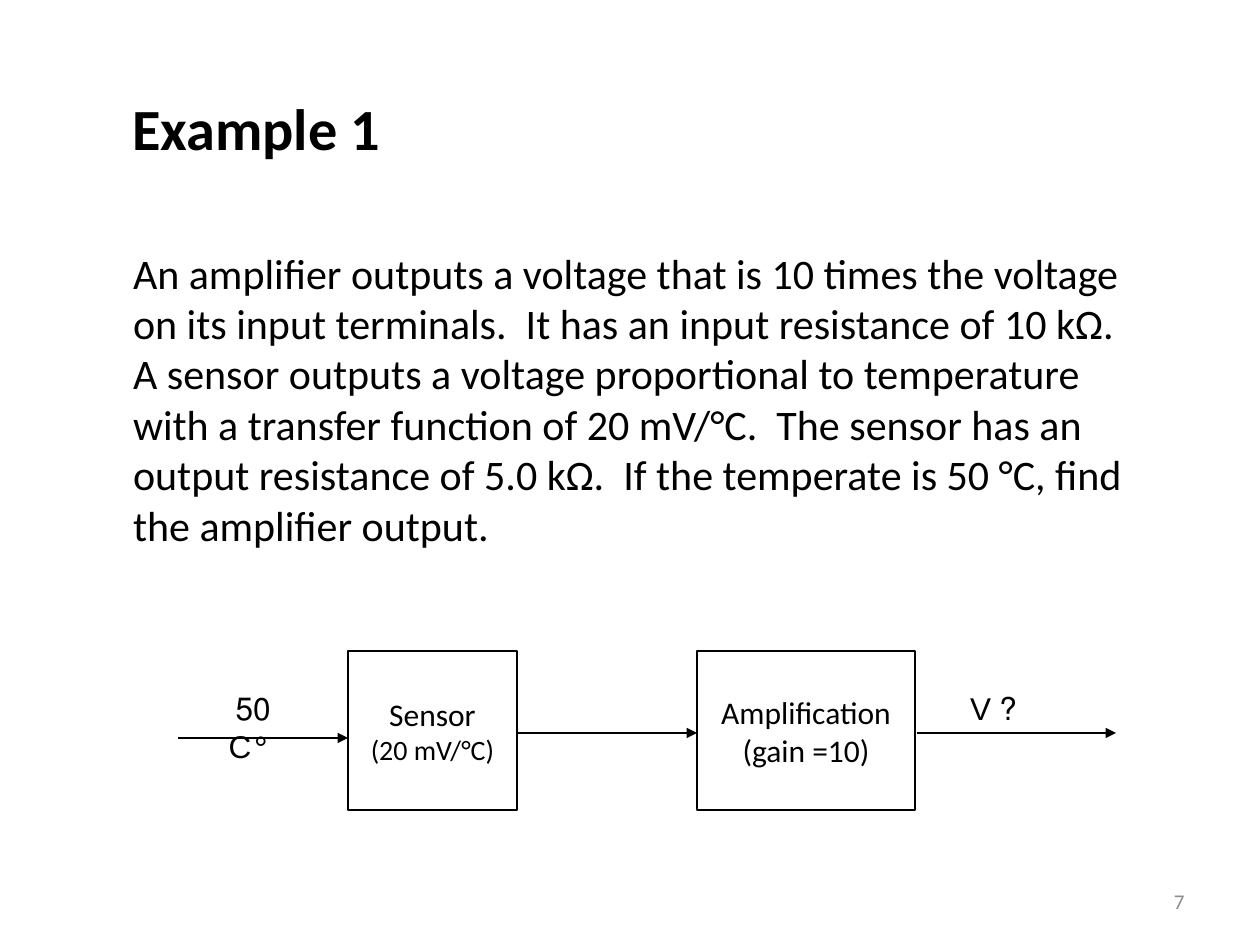
from pptx import Presentation
from pptx.dml.color import RGBColor
from pptx.enum.shapes import MSO_CONNECTOR, MSO_SHAPE
from pptx.enum.text import MSO_ANCHOR, MSO_AUTO_SIZE, PP_ALIGN
from pptx.oxml.ns import qn
from pptx.util import Pt
from lxml import etree

RECTANGLE = MSO_SHAPE.RECTANGLE
STRAIGHT = MSO_CONNECTOR.STRAIGHT
TOP, MIDDLE = MSO_ANCHOR.TOP, MSO_ANCHOR.MIDDLE
LEFT, CENTER, RIGHT = PP_ALIGN.LEFT, PP_ALIGN.CENTER, PP_ALIGN.RIGHT
NO_FIT, GROW = MSO_AUTO_SIZE.NONE, MSO_AUTO_SIZE.SHAPE_TO_FIT_TEXT
PX_PER_INCH = 126
BLACK, GRAY = "000000", "8C8C8C"

PROBLEM = (
    "An amplifier outputs a voltage that is 10 times the voltage on its input "
    "terminals.  It has an input resistance of 10 kΩ.  A sensor outputs a voltage "
    "proportional to temperature with a transfer function of 20 mV/°C.  The sensor "
    "has an output resistance of 5.0 kΩ.  If the temperate is 50 °C, find the "
    "amplifier output."
)


def px(length):
    return round(length * 914400 / PX_PER_INCH)


def color(value):
    return RGBColor.from_string(value)


class BlockDiagramSlide:
    font = "Calibri"
    line_width = Pt(0.75)

    def __init__(self, slide):
        self.slide = slide

    def add_lines(self, frame, lines, align=LEFT, anchor=TOP, wrap=True, font=None,
                  ink=BLACK, bold=False, rtl=False):
        frame.word_wrap = wrap
        frame.vertical_anchor = anchor
        for index, (words, size) in enumerate(lines):
            paragraph = frame.add_paragraph() if index else frame.paragraphs[0]
            paragraph.alignment = align
            if rtl:
                paragraph._p.get_or_add_pPr().set("rtl", "1")
            run = paragraph.add_run()
            run.text = words
            run.font.name = font or self.font
            run.font.size = Pt(size)
            run.font.bold = bold
            run.font.color.rgb = color(ink)

    def title(self, words, left, top, width, height, inset):
        heading = self.slide.shapes.title
        heading.left, heading.top = px(left), px(top)
        heading.width, heading.height = px(width), px(height)
        frame = heading.text_frame
        frame.auto_size = NO_FIT
        frame.margin_left = px(inset)
        self.add_lines(frame, [(words, 33.3)], bold=True)
        frame.paragraphs[0].space_before = Pt(3)

    def text(self, words, size, left, top, width, height, **style):
        frame = self.slide.shapes.add_textbox(
            px(left), px(top), px(width), px(height)).text_frame
        self.add_lines(frame, [(words, size)], **style)
        return frame

    def signal_label(self, words, left, top, width, height):
        frame = self.text(words, 18, left, top, width, height, align=RIGHT,
                          wrap=False, font="Arial", rtl=True)
        frame.auto_size = GROW

    def block(self, lines, left, top, width, height):
        box = self.slide.shapes.add_shape(
            RECTANGLE, px(left), px(top), px(width), px(height))
        box.shadow.inherit = False
        box.fill.background()
        box.line.color.rgb = color(BLACK)
        box.line.width = self.line_width
        self.add_lines(box.text_frame, lines, align=CENTER, anchor=MIDDLE, wrap=False)

    def arrow(self, start, end, y):
        signal = self.slide.shapes.add_connector(
            STRAIGHT, px(start), px(y), px(end), px(y))
        signal.line.color.rgb = color(BLACK)
        signal.line.width = self.line_width
        properties = signal._element.spPr
        etree.SubElement(properties.find(qn("a:ln")), qn("a:tailEnd"), type="triangle")
        etree.SubElement(properties, qn("a:effectLst"))


def main():
    deck = Presentation()
    deck.slide_width, deck.slide_height = px(1260), px(945)
    page = BlockDiagramSlide(deck.slides.add_slide(deck.slide_layouts[5]))

    page.title("Example 1", 105, 86, 1032, 79, inset=27)
    problem = page.text(PROBLEM, 24, 73, 224, 1064, 411)
    problem.margin_left = px(60)
    problem.margin_top = px(23)
    page.text("7", 12, 903, 876, 294, 50, align=RIGHT, anchor=MIDDLE, ink=GRAY)

    block_top, block_height = 651, 159
    sensor_left, sensor_width = 348, 169
    amplifier_left, amplifier_width = 697, 218
    page.block([("Sensor", 18), ("(20 mV/°C)", 16)],
               sensor_left, block_top, sensor_width, block_height)
    page.block([("Amplification", 18), ("(gain =10)", 18)],
               amplifier_left, block_top, amplifier_width, block_height)

    page.arrow(178, sensor_left, 738)
    page.arrow(sensor_left + sensor_width, amplifier_left, 733)
    page.arrow(amplifier_left + amplifier_width + 2, 1116, 733)

    page.signal_label("50 °C", 178, 683, 105, 50)
    page.signal_label("? V", 956, 683, 73, 50)

    deck.save("out.pptx")


if __name__ == "__main__":
    main()
